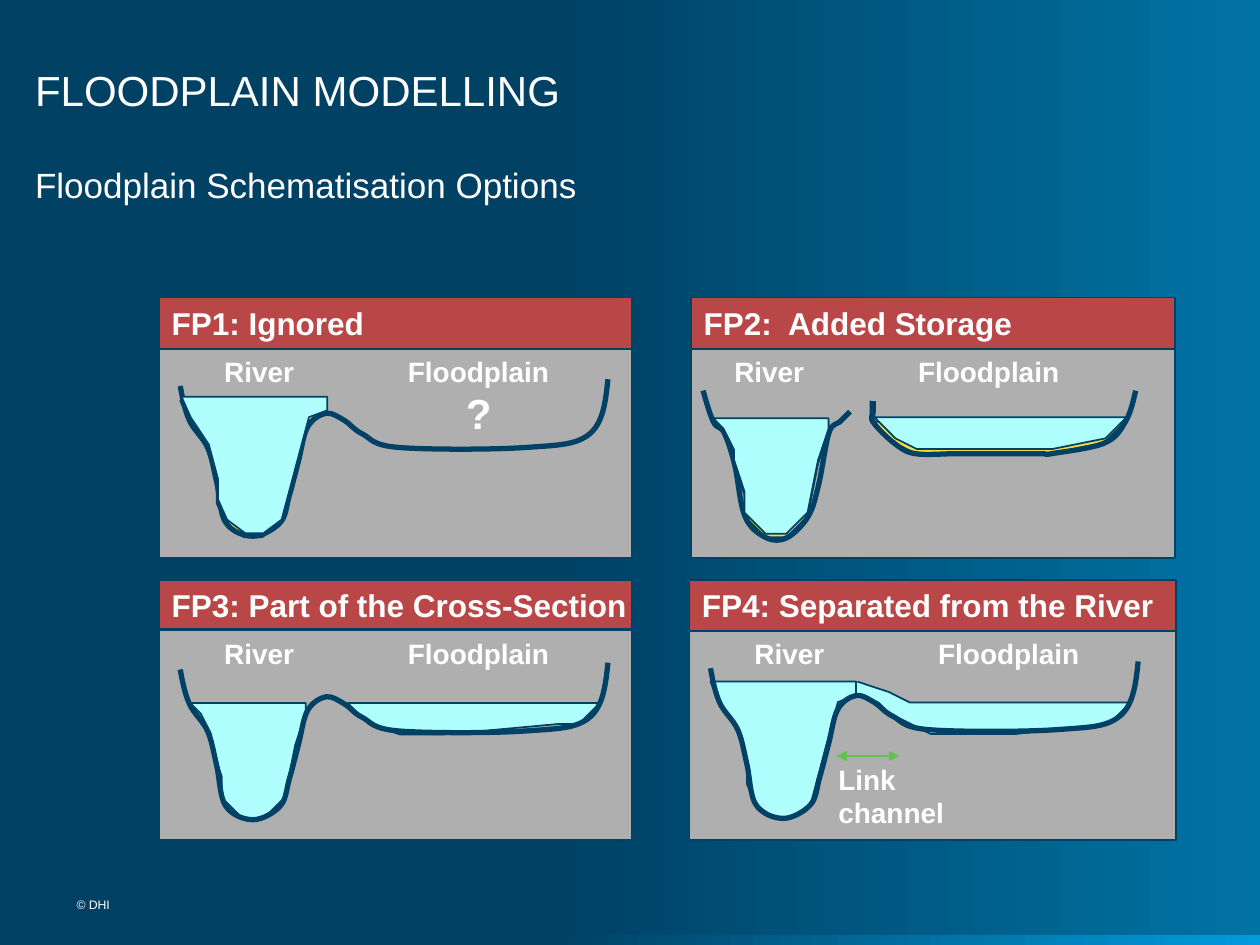
import lxml.etree
import pptx
import pptx.dml.color
import pptx.enum.shapes
import pptx.enum.text
import pptx.oxml.ns
import pptx.util

Pt = pptx.util.Pt
qn = pptx.oxml.ns.qn
rgb = pptx.dml.color.RGBColor.from_string
ALIGN = pptx.enum.text.PP_ALIGN
ANCHOR = pptx.enum.text.MSO_ANCHOR
RECTANGLE = pptx.enum.shapes.MSO_SHAPE.RECTANGLE

NAVY, WATER, MUD, GREY, RED = "004165", "AFFFFF", "FADC41", "AFAFAF", "B94747"


def write(shape, text, size, bold=False, align=ALIGN.LEFT, anchor=ANCHOR.TOP,
          margins=(7.2, 3.6, 7.2, 3.6), color="FFFFFF"):
    frame = shape.text_frame
    frame.word_wrap = True
    frame.auto_size = pptx.enum.text.MSO_AUTO_SIZE.NONE
    frame.vertical_anchor = anchor
    (frame.margin_left, frame.margin_top,
     frame.margin_right, frame.margin_bottom) = [Pt(m) for m in margins]
    paragraph = frame.paragraphs[0]
    paragraph.text = text
    paragraph.alignment = align
    paragraph.space_before = Pt(0)
    for run in paragraph.runs:
        run.font.name = "Arial"
        run.font.size = Pt(size)
        run.font.bold = bold
        run.font.color.rgb = rgb(color)
    return paragraph


def shade(fill, start, end):
    fill.gradient()
    fill.gradient_angle = 0
    for stop, position, color in zip(fill.gradient_stops, (0.44, 1), (start, end)):
        stop.position = position
        stop.color.rgb = rgb(color)


deck = pptx.Presentation()
deck.slide_width, deck.slide_height = Pt(720), Pt(540)
slide = deck.slides.add_slide(deck.slide_layouts[1])
shapes = slide.shapes

# Background and bottom strip
shade(slide.background.fill, "004164", "0073A4")
strip = shapes.add_shape(RECTANGLE, Pt(0), Pt(534.25), Pt(720), Pt(5.75))
strip.shadow.inherit = False
strip.line.fill.background()
shade(strip.fill, "004164", "009BDC")

# Title and subtitle
title, subtitle = shapes.title, slide.placeholders[1]
title.left, title.top, title.width, title.height = Pt(20), Pt(18), Pt(619), Pt(47.5)
write(title, "FLOODPLAIN MODELLING", 24, anchor=ANCHOR.BOTTOM, margins=(0, 0, 0, 0))
subtitle.left, subtitle.top, subtitle.width, subtitle.height = (
    Pt(20), Pt(93.6), Pt(680), Pt(403))
heading = write(subtitle, "Floodplain Schematisation Options", 20, margins=(0, 0, 0, 0))
properties = heading._p.get_or_add_pPr()
properties.set("marL", "0")
properties.set("indent", "0")
lxml.etree.SubElement(properties, qn("a:buNone"))

# Four panels: heading, left, width, heading top, heading height, body top, river label
panels = [
    ("FP1: Ignored", 91, 270, 170, 29.5, 199, 121),
    ("FP2:  Added Storage", 395, 276.5, 170, 29.5, 199, 412.5),
    ("FP3: Part of the Cross-Section", 91, 270, 331.25, 28, 360, 121),
    ("FP4: Separated from the River", 394, 278, 331.25, 29.5, 360, 424),
]
for option, left, width, top, height, body_top, river_left in panels:
    body = shapes.add_shape(RECTANGLE, Pt(left), Pt(body_top), Pt(width), Pt(120))
    header = shapes.add_shape(RECTANGLE, Pt(left), Pt(top), Pt(width), Pt(height))
    for part, color in ((body, GREY), (header, RED)):
        part.shadow.inherit = False
        part.fill.solid()
        part.fill.fore_color.rgb = rgb(color)
        part.line.color.rgb = rgb(NAVY)
        part.line.width = Pt(1)
    write(header, option, 18, bold=True, margins=(7.2, 3.6, 1.5, 3.6))

    ignored = option.startswith("FP1")
    river = shapes.add_textbox(Pt(river_left), Pt(body_top), Pt(60), Pt(27))
    write(river, "River", 16, bold=True)
    plain = shapes.add_textbox(Pt(river_left + 101.5), Pt(body_top), Pt(102),
                               Pt(55.5 if ignored else 27))
    label = write(plain, "Floodplain\n?" if ignored else "Floodplain", 16,
                  bold=True, align=ALIGN.CENTER)
    if ignored:
        label.runs[-1].font.size = Pt(24)

# Outlines in grid units: horizontal unit, vertical unit, points
full_river = (5.2, 3.9, [
    (0, 0), (14, 0), (16, 0), (16, 2), (14, 3), (13, 8), (12, 13), (11, 18), (10, 19),
    (9, 20), (7, 20), (5, 18), (4, 15), (4, 12), (3, 7), (1, 3), (0, 0)])
river_water = (6, 6, [
    (11, 0), (11, 1), (10, 4), (9, 9), (8, 10), (7, 11), (6, 11), (5, 11), (4, 10),
    (3, 9), (3, 7), (2, 4), (2, 3), (1, 1), (0, 0), (11, 0)])
plain_water = (6, 6, [
    (0, 0), (24, 0), (23, 1), (22, 2), (21, 2), (20, 2), (9, 3), (5, 3), (2, 2), (0, 0)])
storage = (6, 6, [
    (24, 1), (22, 3), (17, 4), (13, 4), (8, 4), (5, 4), (4, 4), (2, 3), (0, 1), (0, 0),
    (0, 1), (24, 1)])
storage_edge = (6, 6, [
    (24, 2), (23, 3), (22, 4), (17, 5), (14, 5), (8, 5), (6, 5), (4, 5), (2, 4), (0, 2),
    (0, 0)])
spill = (6, 6, [
    (1, 0), (4, 1), (6, 2), (14, 2), (27, 2), (26, 3), (25, 4), (16, 5), (8, 5), (4, 3),
    (3, 2), (0, 1)])
section_bed = (5.2, 3.9, [
    (0, 1), (1, 6), (3, 10), (4, 15), (5, 21), (8, 23), (11, 21), (12, 17), (13, 12),
    (14, 7), (16, 5), (18, 6), (20, 8), (24, 10), (38, 10), (45, 8), (47, 0)])
river_bed = (6, 6, [
    (0, 0), (1, 3), (2, 4), (3, 7), (4, 12), (6, 14), (8, 14), (10, 12), (11, 9),
    (12, 4), (13, 3), (14, 2)])
plain_bed = (6, 6, [
    (0, 1), (0, 2), (0, 3), (2, 5), (4, 6), (8, 6), (12, 6), (16, 6), (17, 6), (22, 5),
    (24, 3), (25, 0)])
beds = (section_bed, river_bed, plain_bed)

# Placed from back to front: outline, left, top, fill
drawing = [
    (full_river, 103, 229, MUD),
    (section_bed, 103, 216.75, None),
    (full_river, 103.75, 226.75, WATER),
    (plain_water, 499, 241, MUD),
    (river_water, 407.5, 241, MUD),
    (river_bed, 401.75, 223.25, None),
    (storage_edge, 497.5, 229, None),
    (storage, 499, 235, MUD),
    (plain_bed, 499, 223.25, None),
    (river_water, 407.5, 239, WATER),
    (storage, 499.75, 232.5, WATER),
    (river_water, 108.75, 401.75, WATER),
    (plain_water, 198.75, 401.75, WATER),
    (section_bed, 103, 378.75, None),
    (spill, 484, 389.5, WATER),
    (full_river, 406, 389.5, WATER),
    (section_bed, 406, 378, None),
]
STEPS = 12  # subdivisions of a grid unit, so that control points are whole numbers
for outline, left, top, fill in drawing:
    unit_x, unit_y, grid = outline
    points = [(x * STEPS, y * STEPS) for x, y in grid]
    smooth = outline in beds
    vertices = points[1:]
    if smooth:
        # Spline through the points: tangents follow the neighbouring points
        slopes = [((c[0] - a[0]) / 6, (c[1] - a[1]) / 6)
                  for a, c in zip(points, points[2:])]
        after = [(p[0] + s[0], p[1] + s[1]) for p, s in zip(points[1:], slopes)]
        before = [(p[0] - s[0], p[1] - s[1]) for p, s in zip(points[1:], slopes)]
        after.insert(0, [(p + b) / 2 for p, b in zip(points[0], before[0])])
        before.append([(p + a) / 2 for p, a in zip(points[-1], after[-1])])
        vertices = [v for triple in zip(after, before, points[1:]) for v in triple]
    builder = shapes.build_freeform(*points[0], scale=(Pt(unit_x) / STEPS, Pt(unit_y) / STEPS))
    builder.add_line_segments(vertices, close=points[0] == points[-1])
    profile = builder.convert_to_shape(Pt(left), Pt(top))
    profile.shadow.inherit = False
    profile.line.color.rgb = rgb(NAVY)
    profile.line.width = Pt(3 if smooth else 1)
    if fill:
        profile.fill.solid()
        profile.fill.fore_color.rgb = rgb(fill)
    else:
        profile.fill.background()
    if smooth:
        track = profile.element.xpath(".//a:path")[0]
        segments = track.findall(qn("a:lnTo"))
        for first in range(0, len(segments), 3):
            curve = lxml.etree.SubElement(track, qn("a:cubicBezTo"))
            for segment in segments[first:first + 3]:
                curve.append(segment[0])
                track.remove(segment)

# Link channel arrow and label
link = shapes.add_connector(pptx.enum.shapes.MSO_CONNECTOR.STRAIGHT,
                            Pt(478), Pt(432), Pt(514), Pt(432))
link.line.color.rgb = rgb("61C250")
link.line.width = Pt(1.5)
for end in ("a:headEnd", "a:tailEnd"):
    lxml.etree.SubElement(link.element.spPr.find(qn("a:ln")), qn(end), type="triangle")
lxml.etree.SubElement(link.element.spPr, qn("a:effectLst"))
channel = shapes.add_textbox(Pt(472), Pt(432), Pt(90), Pt(46))
write(channel, "Link\nchannel", 16, bold=True)

# Copyright line
copyright_line = shapes.add_textbox(Pt(43.75), Pt(513), Pt(111.5), Pt(14))
write(copyright_line, "© DHI", 7, margins=(0, 0, 0, 0))

deck.save("out.pptx")
